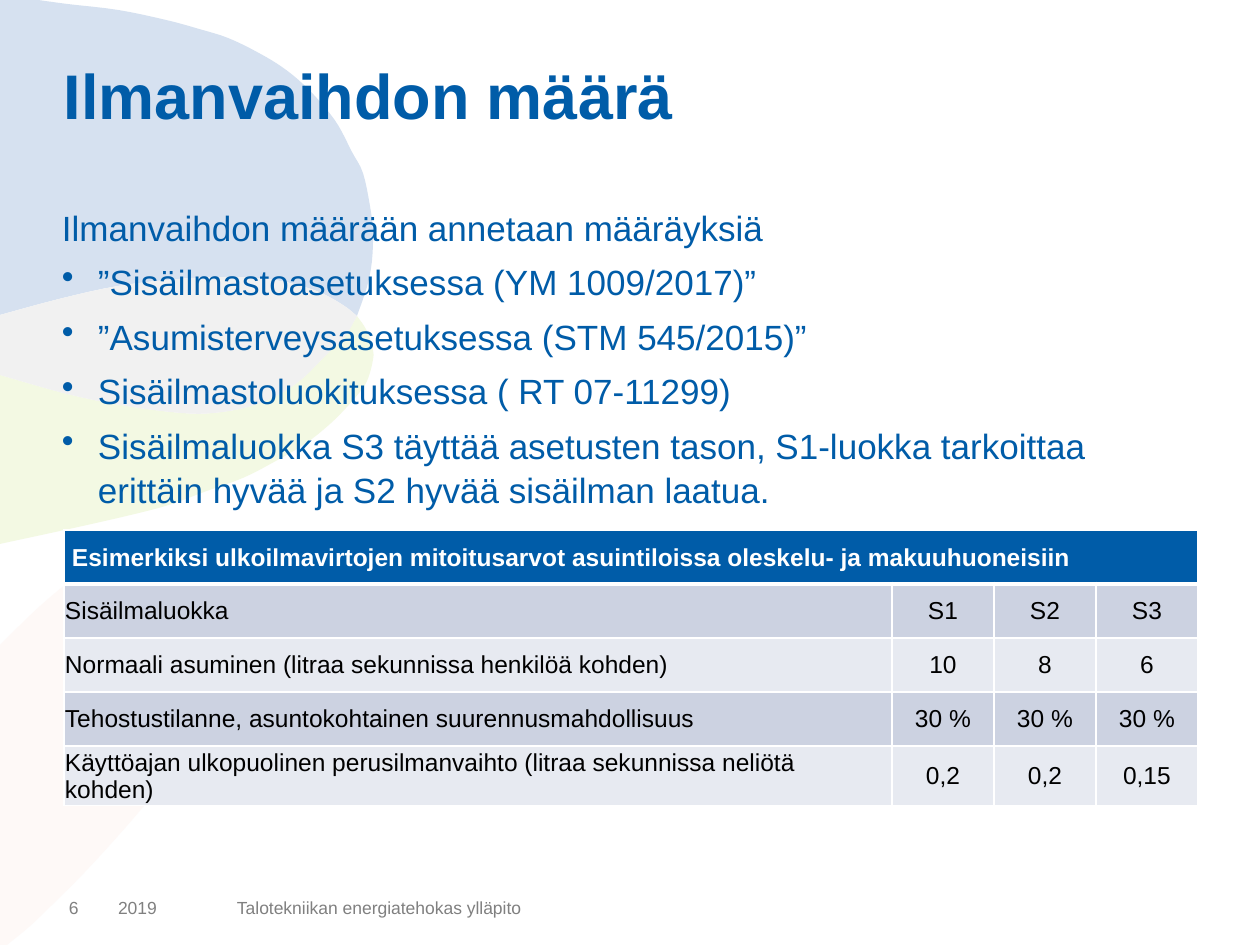
import pptx
import pptx.dml.color
import pptx.enum.text
import pptx.oxml
import pptx.oxml.ns
import pptx.util

PX = 914400 // 126
FONT = "Arial"
COLORS = {
    "blue": "005CA8", "grey": "808080", "white": "FFFFFF", "black": "000000",
    "band_dark": "CCD2E1", "band_light": "E7EAF1",
    "leaf_pink": "FEF9F7", "leaf_green": "F3F9E3", "leaf_blue": "D6E1F0", "leaf_overlap": "F1F1F1",
}

# Content
TITLE = "Ilmanvaihdon määrä"
INTRO = "Ilmanvaihdon määrään annetaan määräyksiä"
BULLETS = [
    "”Sisäilmastoasetuksessa (YM 1009/2017)”",
    "”Asumisterveysasetuksessa (STM 545/2015)”",
    "Sisäilmastoluokituksessa ( RT 07-11299)",
    "Sisäilmaluokka S3 täyttää asetusten tason, S1-luokka tarkoittaa "
    "erittäin hyvää ja S2 hyvää sisäilman laatua.",
]
TABLE_HEADING = "Esimerkiksi ulkoilmavirtojen mitoitusarvot asuintiloissa oleskelu- ja makuuhuoneisiin"
TABLE_ROWS = [
    ("Sisäilmaluokka", "S1", "S2", "S3"),
    ("Normaali asuminen (litraa sekunnissa henkilöä kohden)", "10", "8", "6"),
    ("Tehostustilanne, asuntokohtainen suurennusmahdollisuus", "30 %", "30 %", "30 %"),
    ("Käyttöajan ulkopuolinen perusilmanvaihto (litraa sekunnissa neliötä kohden)", "0,2", "0,2", "0,15"),
]
FOOTER = [  # text, left, width
    ("6", 69, 49),
    ("2019", 118, 118),
    ("Talotekniikan energiatehokas ylläpito", 237, 507),
]

# Leaf edges; the overlap shares its edges with the blue and green leaves
OVERLAP_TOP = [(0, 315), (59, 299), (118, 286), (178, 279), (224, 277), (258, 278),
               (290, 283), (319, 292), (343, 305), (357, 316)]
OVERLAP_BOTTOM = [(0, 375), (67, 394), (126, 406), (181, 413), (214, 413), (248, 407),
                  (276, 396), (302, 379), (328, 353), (344, 338), (357, 316)]
BLUE_EDGE = [(357, 316), (367, 287), (372, 261), (373, 231), (370, 206), (363, 173),
             (352, 152), (338, 125), (322, 104), (303, 84), (282, 67), (257, 52), (228, 38),
             (199, 29), (166, 20), (118, 10), (67, 4), (38, 0)]
GREEN_EDGE = [(357, 316), (367, 331), (373, 350), (373, 360), (369, 376), (363, 388),
              (348, 406), (329, 425), (305, 444), (276, 461), (243, 478), (207, 491),
              (169, 505), (131, 515), (74, 528), (0, 544)]
PINK_EDGE = [(0, 645), (40, 606), (79, 575), (118, 556), (150, 550), (175, 548), (199, 550),
             (223, 558), (241, 569), (253, 583), (260, 598), (261, 606), (258, 633),
             (247, 661), (232, 690), (213, 719), (191, 748), (164, 782), (126, 827),
             (86, 871), (49, 908), (29, 927), (7, 945)]


def px(value):
    return pptx.util.Emu(round(value * PX))


def color(name):
    return pptx.dml.color.RGBColor.from_string(COLORS[name])


def smooth(points, steps=4):
    """Catmull-Rom curve through the points."""
    padded = [points[0]] + points + [points[-1]]
    curve = [points[0]]
    for a, b, c, d in zip(padded, padded[1:], padded[2:], padded[3:]):
        for step in range(1, steps + 1):
            t = step / steps
            curve.append(tuple(
                (2 * q + (r - p) * t + (2 * p - 5 * q + 4 * r - s) * t ** 2
                 + (3 * q - p - 3 * r + s) * t ** 3) / 2
                for p, q, r, s in zip(a, b, c, d)))
    return curve


def add_leaf(slide, outline, fill):
    points = [(x * PX, y * PX) for x, y in outline]
    builder = slide.shapes.build_freeform(*points[0])
    builder.add_line_segments(points[1:], close=True)
    shape = builder.convert_to_shape()
    shape.shadow.inherit = False
    shape.fill.solid()
    shape.fill.fore_color.rgb = color(fill)
    shape.line.fill.background()


def style(paragraph, size, font_color, bold=False):
    for run in paragraph.runs:
        run.font.name = FONT
        run.font.size = pptx.util.Pt(size)
        run.font.bold = bold
        run.font.color.rgb = color(font_color)


def add_text(slide, box, lines, size, font_color, bold=False, anchor="TOP"):
    frame = slide.shapes.add_textbox(*map(px, box)).text_frame
    frame.word_wrap = True
    frame.margin_left = frame.margin_top = frame.margin_right = frame.margin_bottom = 0
    frame.vertical_anchor = pptx.enum.text.MSO_ANCHOR[anchor]
    frame.text = "\n".join(lines)
    for paragraph in frame.paragraphs:
        style(paragraph, size, font_color, bold)
    return frame.paragraphs


def add_bullet(paragraph, indent):
    properties = paragraph._p.get_or_add_pPr()
    properties.set("marL", str(px(indent)))
    properties.set("indent", str(-px(indent)))
    properties.append(pptx.oxml.parse_xml(
        f'<a:buChar {pptx.oxml.ns.nsdecls("a")} char="•"/>'))


def set_cell(cell, text, fill, font_color, align="LEFT", bold=False, left=1, bottom_line=1):
    cell.fill.solid()
    cell.fill.fore_color.rgb = color(fill)
    cell.vertical_anchor = pptx.enum.text.MSO_ANCHOR.MIDDLE
    cell.margin_left, cell.margin_right = px(left), px(1)
    cell.margin_top, cell.margin_bottom = px(1), 0
    cell.text = text
    paragraph = cell.text_frame.paragraphs[0]
    paragraph.alignment = pptx.enum.text.PP_ALIGN[align]
    style(paragraph, 14, font_color, bold)
    properties = cell._tc.get_or_add_tcPr()
    for position, side in enumerate("LRTB"):
        width = pptx.util.Pt(bottom_line if side == "B" else 1)
        properties.insert(position, pptx.oxml.parse_xml(
            f'<a:ln{side} {pptx.oxml.ns.nsdecls("a")} w="{width}"><a:solidFill>'
            f'<a:srgbClr val="{COLORS["white"]}"/></a:solidFill></a:ln{side}>'))


def add_values_table(slide):
    widths, row_height = [828, 102, 102, 102], 54
    count = len(TABLE_ROWS) + 1
    table = slide.shapes.add_table(
        count, len(widths), px(64), px(530), px(sum(widths)), px(count * row_height)).table
    for column, width in zip(table.columns, widths):
        column.width = px(width)
    for row in table.rows:
        row.height = px(row_height)
    for column in range(len(widths)):
        set_cell(table.cell(0, column), "" if column else TABLE_HEADING, "blue", "white",
                 bold=True, left=8, bottom_line=3)
    table.cell(0, 0).merge(table.cell(0, len(widths) - 1))
    for row, values in enumerate(TABLE_ROWS, start=1):
        fill = "band_dark" if row % 2 else "band_light"
        for column, value in enumerate(values):
            set_cell(table.cell(row, column), value, fill, "black",
                     align="CENTER" if column else "LEFT")


def main():
    presentation = pptx.Presentation()
    presentation.slide_width, presentation.slide_height = px(1260), px(945)
    slide = presentation.slides.add_slide(presentation.slide_layouts[6])

    # Background leaves
    top, bottom = smooth(OVERLAP_TOP), smooth(OVERLAP_BOTTOM)
    add_leaf(slide, smooth(PINK_EDGE) + [(0, 945)], "leaf_pink")
    add_leaf(slide, bottom + smooth(GREEN_EDGE)[1:], "leaf_green")
    add_leaf(slide, top + smooth(BLUE_EDGE)[1:] + [(0, 0)], "leaf_blue")
    add_leaf(slide, top + bottom[-2::-1], "leaf_overlap")

    # Footer
    for text, left, width in FOOTER:
        add_text(slide, (left, 898, width, 20), [text], 10, "grey", anchor="MIDDLE")

    # Title and body
    title = add_text(slide, (64, 65, 1134, 159), [TITLE], 36, "blue", bold=True)
    title[0].line_spacing = 0.9
    body = add_text(slide, (62, 204, 1134, 326), [INTRO] + BULLETS, 20, "blue")
    for paragraph in body:
        paragraph.line_spacing = 1.05
    for paragraph in body[1:]:
        paragraph.space_before = pptx.util.Pt(6)
        add_bullet(paragraph, 36)

    # Table
    add_values_table(slide)
    presentation.save("out.pptx")


if __name__ == "__main__":
    main()
